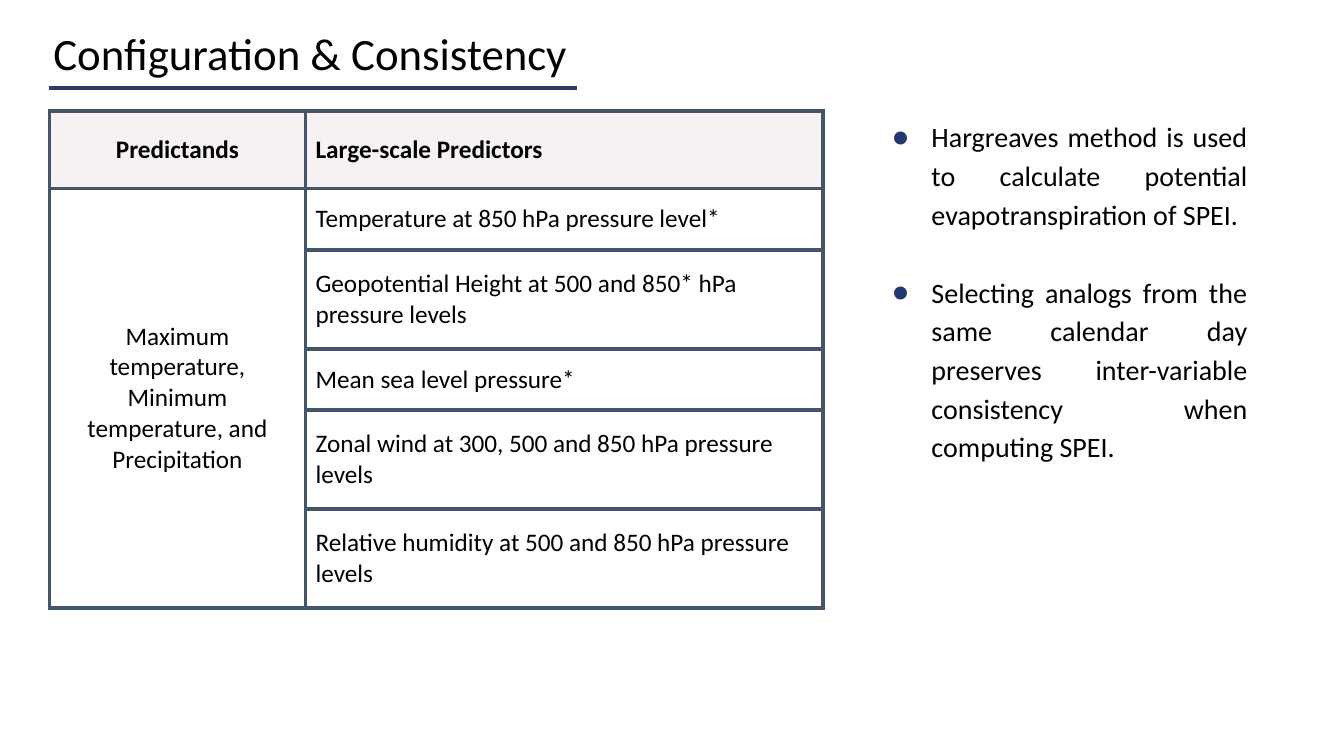
from dataclasses import dataclass

from lxml import etree
from pptx import Presentation
from pptx.dml.color import RGBColor
from pptx.enum.shapes import MSO_CONNECTOR
from pptx.enum.text import MSO_ANCHOR, PP_ALIGN
from pptx.oxml.ns import qn
from pptx.util import Inches, Pt

LEFT, CENTER, JUSTIFY = PP_ALIGN.LEFT, PP_ALIGN.CENTER, PP_ALIGN.JUSTIFY
MIDDLE = MSO_ANCHOR.MIDDLE
STRAIGHT = MSO_CONNECTOR.STRAIGHT

TITLE = "Configuration & Consistency"
HEADERS = ["Predictands", "Large-scale Predictors"]
PREDICTANDS = ["Maximum temperature, Minimum temperature, and", "Precipitation"]
PREDICTORS = [
    "Temperature at 850 hPa pressure level*",
    "Geopotential Height at 500 and 850* hPa pressure levels",
    "Mean sea level pressure*",
    "Zonal wind at 300, 500 and 850 hPa pressure levels",
    "Relative humidity at 500 and 850 hPa pressure levels",
]
NOTES = [
    "Hargreaves method is used to calculate potential evapotranspiration of SPEI.",
    "Selecting analogs from the same calendar day preserves inter-variable "
    "consistency when computing SPEI.",
]

ONE_LINE, TWO_LINES = 0.61, 0.98
COLUMN_WIDTHS = [2.54, 5.13]
ROW_HEIGHTS = [0.77, ONE_LINE, TWO_LINES, ONE_LINE, TWO_LINES, TWO_LINES]
LEFT_EDGE = 0.49


@dataclass(frozen=True)
class Theme:
    font: str = "Calibri"
    text: str = "000000"
    rule: str = "293C69"
    bullet: str = "213970"
    border: str = "44546A"
    header: str = "F4EFEF"
    header_opacity: int = 80
    title_size: int = 32
    note_size: int = 20
    table_size: int = 18
    line_width: int = 3


THEME = Theme()


def add_color(parent, color):
    fill = etree.SubElement(parent, qn("a:solidFill"))
    etree.SubElement(fill, qn("a:srgbClr"), val=color)


def write_paragraphs(frame, lines, size, alignment=LEFT, bold=False):
    frame.word_wrap = True
    frame.margin_left = frame.margin_right = Inches(0.1)
    frame.margin_top = frame.margin_bottom = Inches(0.1)
    for index, line in enumerate(lines):
        paragraph = frame.paragraphs[0] if index == 0 else frame.add_paragraph()
        paragraph.text = line
        paragraph.alignment = alignment
        font = paragraph.font
        font.name, font.size, font.bold = THEME.font, Pt(size), bold
        font.color.rgb = RGBColor.from_string(THEME.text)


def add_text(slide, box, lines, size, alignment=LEFT):
    frame = slide.shapes.add_textbox(*map(Inches, box)).text_frame
    write_paragraphs(frame, lines, size, alignment)
    return frame


def add_bullet(paragraph):
    properties = paragraph._p.get_or_add_pPr()
    properties.set("marL", str(Inches(0.5)))
    properties.set("indent", str(Inches(-0.39)))
    color = etree.Element(qn("a:buClr"))
    etree.SubElement(color, qn("a:srgbClr"), val=THEME.bullet)
    font = etree.Element(qn("a:buFont"), typeface=THEME.font)
    character = etree.Element(qn("a:buChar"), char="●")
    default_run = properties.find(qn("a:defRPr"))
    for element in (color, font, character):
        default_run.addprevious(element)


def add_borders(cell):
    properties = cell._tc.get_or_add_tcPr()
    for index, side in enumerate(("lnL", "lnR", "lnT", "lnB")):
        line = etree.Element(qn(f"a:{side}"), w=str(Pt(THEME.line_width)))
        add_color(line, THEME.border)
        properties.insert(index, line)


def fill_header(cell):
    cell.fill.solid()
    cell.fill.fore_color.rgb = RGBColor.from_string(THEME.header)
    color = cell._tc.tcPr.find(f".//{qn('a:srgbClr')}")
    etree.SubElement(color, qn("a:alpha"), val=str(THEME.header_opacity * 1000))


def add_predictor_table(slide):
    rows = [[[header] for header in HEADERS]]
    for index, predictor in enumerate(PREDICTORS):
        rows.append([PREDICTANDS if index == 0 else [], [predictor]])
    box = (LEFT_EDGE, 1.1, sum(COLUMN_WIDTHS), sum(ROW_HEIGHTS))
    table = slide.shapes.add_table(
        len(rows), len(HEADERS), *map(Inches, box)).table
    for column, width in zip(table.columns, COLUMN_WIDTHS):
        column.width = Inches(width)
    for row, height in zip(table.rows, ROW_HEIGHTS):
        row.height = Inches(height)
    table.cell(1, 0).merge(table.cell(len(PREDICTORS), 0))
    for row_index, row in enumerate(rows):
        for column_index, lines in enumerate(row):
            cell = table.cell(row_index, column_index)
            is_header = row_index == 0
            write_paragraphs(cell.text_frame, lines, THEME.table_size,
                             CENTER if column_index == 0 else LEFT, is_header)
            cell.vertical_anchor = MIDDLE
            if is_header:
                fill_header(cell)
            else:
                cell.fill.background()
            add_borders(cell)


def add_title(slide):
    add_text(slide, (0.43, 0.16, 5.95, 0.74), [TITLE], THEME.title_size)
    ends = (LEFT_EDGE, 0.87, 5.72, 0.87)
    rule = slide.shapes.add_connector(STRAIGHT, *map(Inches, ends))
    rule.line.color.rgb = RGBColor.from_string(THEME.rule)
    rule.line.width = Pt(THEME.line_width)
    etree.SubElement(rule._element.spPr, qn("a:effectLst"))


def add_notes(slide):
    frame = add_text(slide, (8.64, 1.04, 3.83, 5.35), NOTES,
                     THEME.note_size, JUSTIFY)
    for index, paragraph in enumerate(frame.paragraphs):
        add_bullet(paragraph)
        paragraph.line_spacing = 1.15
        if index:
            paragraph.space_before = Pt(28)


def main():
    presentation = Presentation()
    presentation.slide_width = Inches(13.33)
    presentation.slide_height = Inches(7.5)
    slide = presentation.slides.add_slide(presentation.slide_layouts[6])
    add_notes(slide)
    add_title(slide)
    add_predictor_table(slide)
    presentation.save("out.pptx")


if __name__ == "__main__":
    main()
